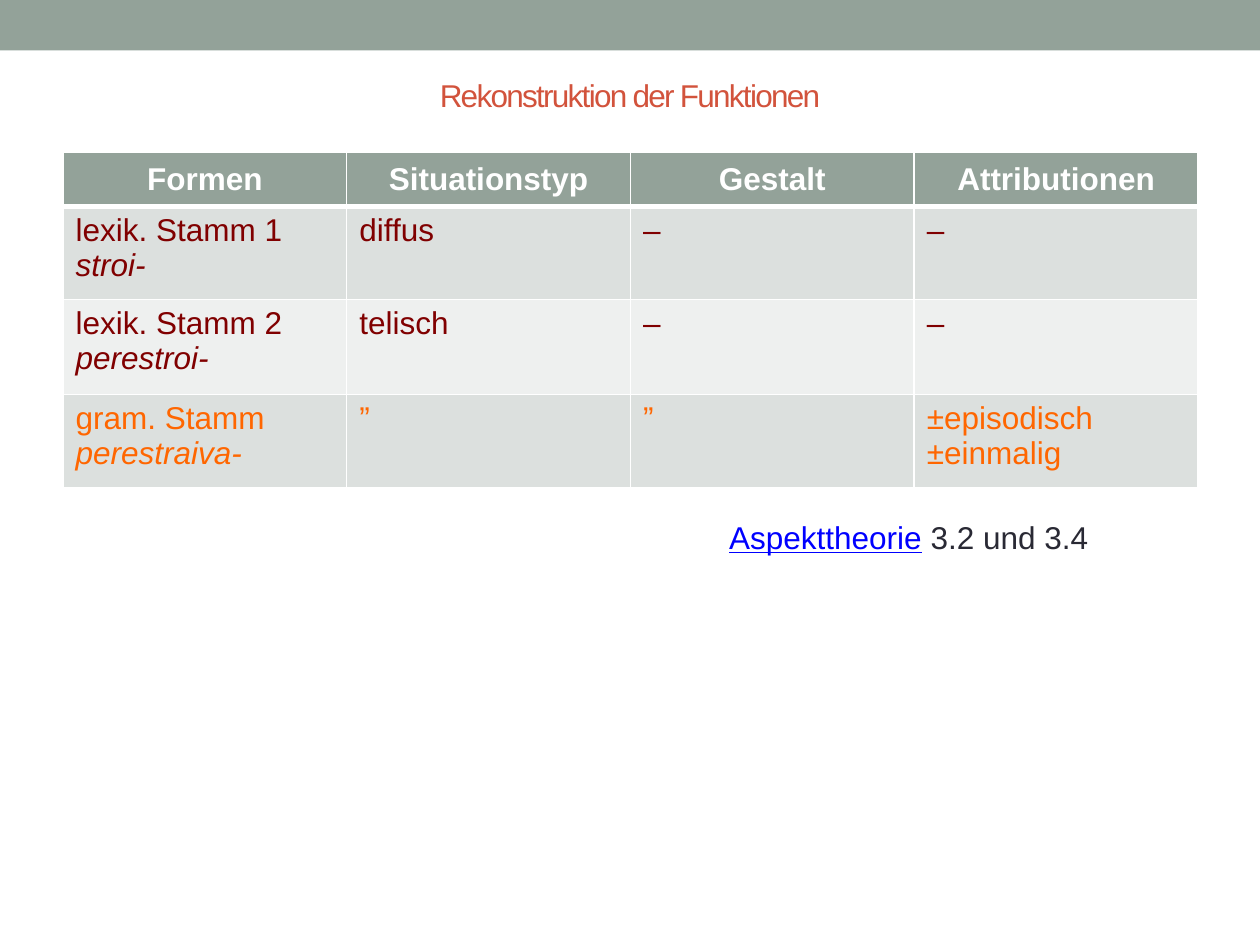
from lxml import etree
from pptx import Presentation, util as u
from pptx.dml.color import RGBColor
from pptx.enum import shapes, text
from pptx.oxml.ns import qn

# Content: a cell is a list of paragraphs, a paragraph a list of (text, format)
TITLE = "Rekonstruktion der Funktionen"
HEAD = ["Formen", "Situationstyp", "Gestalt", "Attributionen"]
ITALIC = {"italic": True}
ROWS = [
    ("800000", [[[("lexik. Stamm 1 ", {}), ("stroi-", ITALIC)]],
                [[("diffus", {})]], [[("–", {})]], [[("–", {})]]]),
    ("800000", [[[("lexik. Stamm 2 ", {}), ("perestroi-", ITALIC)]],
                [[("telisch", {})]], [[("–", {})]], [[("–", {})]]]),
    ("FF6600", [[[("gram. Stamm ", {}), ("perestraiva-", ITALIC)]],
                [[("”", {})]], [[("”", {})]],
                [[("±episodisch", {})], [("±einmalig", {})]]]),
]
SOURCE = [("Aspekttheorie", "0000FF", {"underline": True}),
          (" 3.2 und 3.4 ", "292934", {})]

GREEN, WHITE = "93A299", "FFFFFF"
BANDS = ["DCE0DE", "EEF0EF"]
ROW_HEIGHTS = [1.09, 1.88, 1.91, 1.88]
COL_WIDTH = 5.72
BASE = {"name": "Arial", "size": u.Pt(18)}


def rgb(value):
    return RGBColor.from_string(value)


def fill(obj, color):
    obj.fill.solid()
    obj.fill.fore_color.rgb = rgb(color)


def add_run(p, words, color, fmt):
    r = p.add_run()
    r.text = words
    for key, value in {**BASE, **fmt}.items():
        setattr(r.font, key, value)
    r.font.color.rgb = rgb(color)
    return r


def add_text(slide, left, top, width, height, anchor, align):
    tf = slide.shapes.add_textbox(*map(u.Cm, (left, top, width, height))).text_frame
    tf.word_wrap = True
    tf.vertical_anchor = anchor
    tf.paragraphs[0].alignment = align
    return tf


def set_borders(cell, bottom):
    tcPr = cell._tc.get_or_add_tcPr()
    for i, (side, width) in enumerate(
            [("lnL", 1), ("lnR", 1), ("lnT", 1), ("lnB", bottom)]):
        ln = etree.Element(qn("a:" + side), w=str(u.Pt(width)))
        solid = etree.SubElement(ln, qn("a:solidFill"))
        etree.SubElement(solid, qn("a:srgbClr"), val=WHITE)
        tcPr.insert(i, ln)


prs = Presentation()
prs.slide_width, prs.slide_height = u.Cm(25.4), u.Cm(19.05)
s = prs.slides.add_slide(prs.slide_layouts[6])

# Top band
band = s.shapes.add_shape(shapes.MSO_SHAPE.RECTANGLE, 0, 0, prs.slide_width, u.Cm(1.02))
band.shadow.inherit = False
fill(band, GREEN)
band.line.fill.background()

# Title
tf = add_text(s, 1.27, 0.99, 22.86, 1.83, text.MSO_ANCHOR.MIDDLE, text.PP_ALIGN.CENTER)
r = add_run(tf.paragraphs[0], TITLE, "D2533C", {})
r.font._element.set("spc", "-100")

# Table
table = s.shapes.add_table(len(ROWS) + 1, len(HEAD), u.Cm(1.27), u.Cm(3.07),
                           u.Cm(COL_WIDTH * len(HEAD)), u.Cm(sum(ROW_HEIGHTS))).table
for col in table.columns:
    col.width = u.Cm(COL_WIDTH)
for row, height in zip(table.rows, ROW_HEIGHTS):
    row.height = u.Cm(height)

for i, words in enumerate(HEAD):
    cell = table.cell(0, i)
    cell.vertical_anchor = text.MSO_ANCHOR.MIDDLE
    p = cell.text_frame.paragraphs[0]
    p.alignment = text.PP_ALIGN.CENTER
    add_run(p, words, WHITE, {"bold": True})
    fill(cell, GREEN)
    set_borders(cell, 3)

for n, (color, cells) in enumerate(ROWS):
    for i, paragraphs in enumerate(cells):
        cell = table.cell(n + 1, i)
        tf = cell.text_frame
        for k, runs in enumerate(paragraphs):
            p = tf.add_paragraph() if k else tf.paragraphs[0]
            for words, fmt in runs:
                add_run(p, words, color, fmt)
        fill(cell, BANDS[n % 2])
        set_borders(cell, 1)
        if n == 0:  # keep the thick rule under the header
            cell._tc.tcPr.find(qn("a:lnT")).set("w", str(u.Pt(3)))

# Source reference
tf = add_text(s, 14.45, 10.31, 9.42, 1.02, text.MSO_ANCHOR.TOP, text.PP_ALIGN.JUSTIFY)
for words, color, fmt in SOURCE:
    add_run(tf.paragraphs[0], words, color, fmt)

prs.save("out.pptx")
